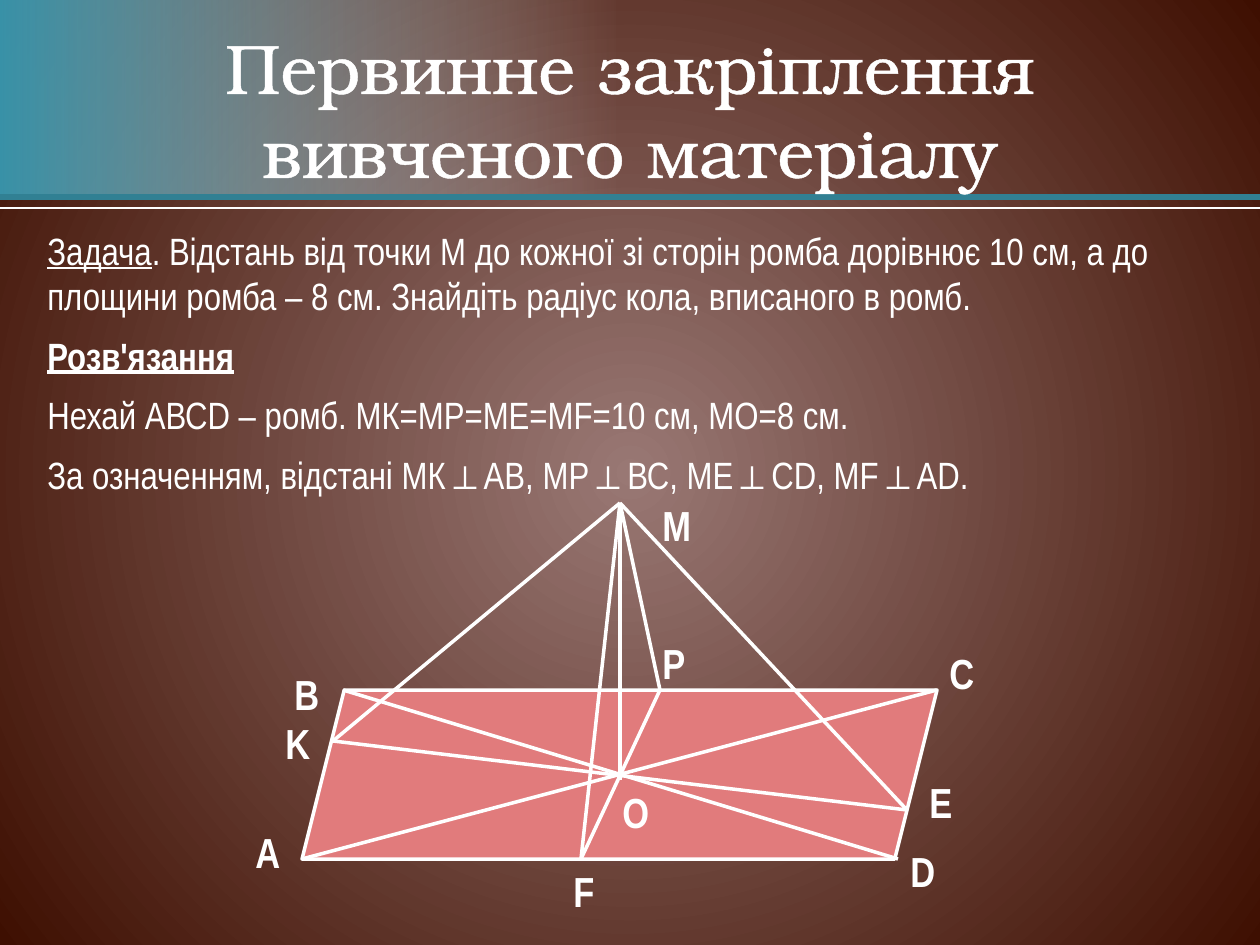
from lxml import etree
from pptx import Presentation, util as u
from pptx.dml.color import RGBColor
from pptx.enum import shapes, text
from pptx.oxml import parse_xml
from pptx.oxml.ns import nsdecls, qn

SCALE = u.Inches(1) / 126
TITLE = "Первинне закріплення вивченого матеріалу"
BODY = [
    [("Задача", {"underline": True}),
     (". Відстань від точки М до кожної зі сторін ромба дорівнює 10 см, "
      "а до площини ромба – 8 см. Знайдіть радіус кола, вписаного в ромб.", {})],
    [("Розв'язання", {"bold": True, "underline": True})],
    [("Нехай АВСD – ромб. МК=МР=МЕ=MF=10 см, МО=8 см.", {})],
    [("За означенням, відстані МК⊥АВ, МР⊥ВС, МЕ⊥CD, MF⊥AD.", {})],
]
POINTS = {
    "A": (302, 859), "B": (343, 690), "C": (937, 690), "D": (898, 859),
    "K": (333, 741), "E": (907, 810), "P": (660, 690), "F": (581, 859),
    "O": (620, 780), "M": (620, 503),
}
SEGMENTS = ["AC", "BD", "KE", "PF", "OM", "MK", "MP", "ME", "MF"]
LABELS = [
    ("K", 273, 711), ("E", 917, 770), ("P", 650, 631), ("M", 650, 493),
    ("D", 898, 839), ("С", 937, 641), ("В", 282, 662), ("А", 243, 820),
    ("F", 561, 859), ("O", 610, 780),
]


def px(*lengths):
    return [u.Emu(round(length * SCALE)) for length in lengths]


def color(value):
    return RGBColor.from_string(value)


def assign(target, values):
    for name, value in values.items():
        setattr(target, name, value)


class Board:
    white = "FFFFFF"
    title_font = "TeX Gyre Bonum"
    text_font = "Arial Narrow"

    def __init__(self, page):
        self.page = page

    def gradient(self, owner, fill, stops, direction):
        fill.gradient()
        stop_xml = "".join(
            f'<a:gs pos="{place * 1000}"><a:srgbClr val="{value}">'
            f'<a:alpha val="{alpha * 1000}"/></a:srgbClr></a:gs>'
            for place, value, alpha in stops)
        old = next(owner.iter(qn("a:gradFill")))
        old.getparent().replace(old, parse_xml(
            f'<a:gradFill {nsdecls("a")} rotWithShape="1">'
            f'<a:gsLst>{stop_xml}</a:gsLst>{direction}</a:gradFill>'))

    def background(self, stops):
        self.gradient(
            self.page.element, self.page.background.fill, stops,
            '<a:path path="circle"><a:fillToRect l="50000" t="50000" '
            'r="50000" b="50000"/></a:path>')

    def shape(self, kind, area):
        shape = self.page.shapes.add_shape(kind, *px(*area))
        shape.shadow.inherit = False
        return shape

    def band(self, area, stops):
        band = self.shape(shapes.MSO_SHAPE.RECTANGLE, area)
        band.line.fill.background()
        self.gradient(band.element, band.fill, stops,
                      '<a:lin ang="0" scaled="0"/>')

    def parallelogram(self, area, fill):
        shape = self.shape(shapes.MSO_SHAPE.PARALLELOGRAM, area)
        shape.fill.solid()
        shape.fill.fore_color.rgb = color(fill)
        shape.line.color.rgb = color(self.white)
        shape.line.width = u.Pt(2)

    def line(self, start, end, value=white, width=2):
        line = self.page.shapes.add_connector(
            shapes.MSO_CONNECTOR.STRAIGHT, *px(*start, *end))
        line.line.color.rgb = color(value)
        line.line.width = u.Pt(width)
        etree.SubElement(line.element.spPr, qn("a:effectLst"))

    def text(self, area, paragraphs, size, font=text_font, frame=None,
             style=None, gap=None, outline=0):
        box = self.page.shapes.add_textbox(*px(*area)).text_frame
        assign(box, {"word_wrap": True, **(frame or {})})
        for index, spans in enumerate(paragraphs):
            para = box.add_paragraph() if index else box.paragraphs[0]
            assign(para, style or {})
            if gap:
                para.space_after = u.Pt(gap)
                if index:
                    para.space_before = u.Pt(gap)
            for words, extra in spans:
                span = para.add_run()
                span.text = words
                assign(span.font, {"name": font, "size": u.Pt(size), **extra})
                span.font.color.rgb = color(self.white)
                if outline:
                    span.font._element.insert(0, parse_xml(
                        f'<a:ln {nsdecls("a")} w="{u.Pt(outline)}"><a:solidFill>'
                        f'<a:srgbClr val="{self.white}"/></a:solidFill></a:ln>'))


def main():
    deck = Presentation()
    deck.slide_width, deck.slide_height = px(1260, 945)
    board = Board(deck.slides.add_slide(deck.slide_layouts[6]))

    board.background([(0, "997874", 100), (100, "3E0F01", 100)])
    board.band((0, 0, 1260, 199), [(0, "3891A7", 100), (49, "E8EEF1", 0)])
    board.line((0, 197), (1260, 197), "318093", 3)
    board.line((0, 208), (1260, 208), width=1.25)

    board.text((63, 21, 1134, 174), [[(TITLE, {})]], 40, board.title_font,
               {"vertical_anchor": text.MSO_ANCHOR.MIDDLE},
               {"alignment": text.PP_ALIGN.CENTER}, outline=1.45)
    board.text((35, 221, 1225, 301), BODY, 21.7, gap=4)

    board.parallelogram((302, 690, 635, 169), "E17B7C")
    for start, end in SEGMENTS:
        board.line(POINTS[start], POINTS[end])
    for name, left, top in LABELS:
        board.text((left, top, 59, 63), [[(name, {"bold": True})]], 24,
                   frame={"auto_size": text.MSO_AUTO_SIZE.SHAPE_TO_FIT_TEXT})

    deck.save("out.pptx")


if __name__ == "__main__":
    main()
